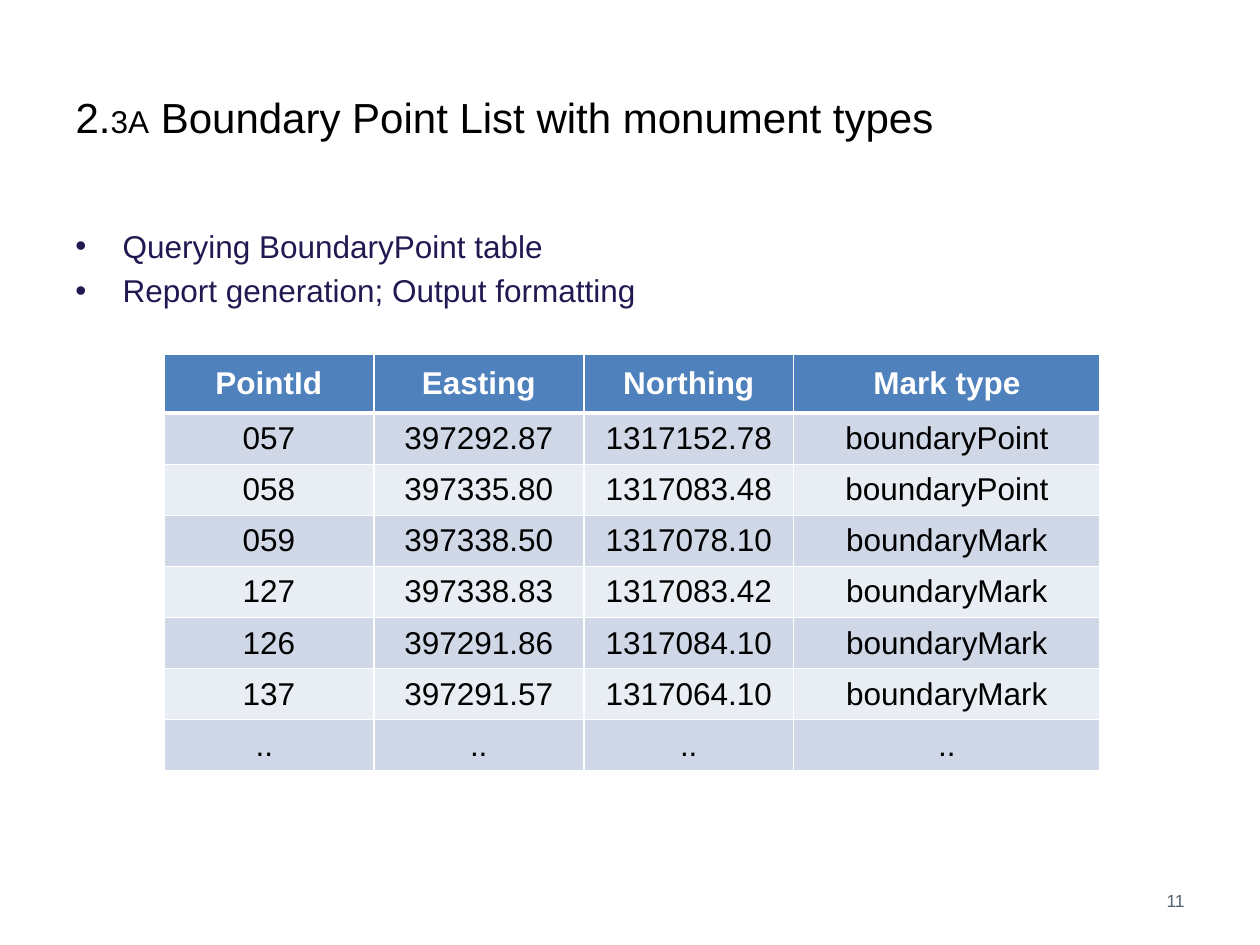
from lxml import etree
from pptx import Presentation
from pptx.dml.color import RGBColor
from pptx.enum import text
from pptx.oxml import ns
from pptx.util import Pt

FONT = "Arial"
BLACK = RGBColor(0x00, 0x00, 0x00)
WHITE = RGBColor(0xFF, 0xFF, 0xFF)
NAVY = RGBColor(0x21, 0x1A, 0x52)
SLATE = RGBColor(0x54, 0x61, 0x6E)
HEADER_BLUE = RGBColor(0x4F, 0x81, 0xBD)
BANDS = [RGBColor(0xD0, 0xD8, 0xE8), RGBColor(0xE9, 0xED, 0xF4)]

COLUMN_WIDTHS = [120, 120, 120, 175]
HEADER_HEIGHT, ROW_HEIGHT = 33.8, 29.2
POINTS = [
    ["PointId", "Easting", "Northing", "Mark type"],
    ["057", "397292.87", "1317152.78", "boundaryPoint"],
    ["058", "397335.80", "1317083.48", "boundaryPoint"],
    ["059", "397338.50", "1317078.10", "boundaryMark"],
    ["127", "397338.83", "1317083.42", "boundaryMark"],
    ["126", "397291.86", "1317084.10", "boundaryMark"],
    ["137", "397291.57", "1317064.10", "boundaryMark"],
    [".. ", "..", "..", ".."],
]


def write(para, wording, size=18, color=BLACK, bold=False, align=text.PP_ALIGN.LEFT):
    """Add one formatted span to a paragraph."""
    para.alignment = align
    span = para.add_run()
    span.text = wording
    span.font.name = FONT
    span.font.size = Pt(size)
    span.font.bold = bold
    span.font.color.rgb = color


def add_bullet(para, indent):
    properties = para._p.get_or_add_pPr()
    properties.set("marL", str(Pt(indent)))
    properties.set("indent", str(-Pt(indent)))
    etree.SubElement(properties, ns.qn("a:buFont"), typeface=FONT)
    etree.SubElement(properties, ns.qn("a:buChar"), char="•")


def set_borders(cell, bottom):
    """Draw white borders, 1 pt wide except for the bottom one."""
    properties = cell._tc.get_or_add_tcPr()
    widths = {"lnL": 1, "lnR": 1, "lnT": 1, "lnB": bottom}
    for place, (side, width) in enumerate(widths.items()):
        line = etree.Element(ns.qn(f"a:{side}"), w=str(Pt(width)))
        fill = etree.SubElement(line, ns.qn("a:solidFill"))
        etree.SubElement(fill, ns.qn("a:srgbClr"), val=str(WHITE))
        properties.insert(place, line)


def add_box(page, box, anchor):
    frame = page.shapes.add_textbox(*map(Pt, box)).text_frame
    frame.word_wrap = True
    frame.vertical_anchor = anchor
    return frame


def place_title(page, box):
    title = page.shapes.title
    title.left, title.top, title.width, title.height = map(Pt, box)
    frame = title.text_frame
    frame.auto_size = text.MSO_AUTO_SIZE.NONE
    frame.vertical_anchor = text.MSO_ANCHOR.MIDDLE
    para = frame.paragraphs[0]
    write(para, "2.", size=24)
    write(para, "3A", size=18)
    write(para, " Boundary Point List with monument types", size=24)


def place_bullets(page, box):
    frame = add_box(page, box, text.MSO_ANCHOR.TOP)
    lines = ["Querying BoundaryPoint table", "Report generation; Output formatting"]
    for number, wording in enumerate(lines):
        para = frame.add_paragraph() if number else frame.paragraphs[0]
        add_bullet(para, 27)
        if number:
            para.space_before = Pt(4)
        write(para, wording, color=NAVY)


def place_table(page, box):
    table = page.shapes.add_table(len(POINTS), len(COLUMN_WIDTHS), *map(Pt, box)).table
    for column, width in zip(table.columns, COLUMN_WIDTHS):
        column.width = Pt(width)
    for number, (row, values) in enumerate(zip(table.rows, POINTS)):
        header = number == 0
        row.height = Pt(HEADER_HEIGHT if header else ROW_HEIGHT)
        for cell, wording in zip(row.cells, values):
            cell.fill.solid()
            cell.fill.fore_color.rgb = HEADER_BLUE if header else BANDS[(number - 1) % 2]
            cell.vertical_anchor = text.MSO_ANCHOR.MIDDLE
            set_borders(cell, bottom=3 if header else 1)
            write(cell.text_frame.paragraphs[0], wording, bold=header,
                  color=WHITE if header else BLACK, align=text.PP_ALIGN.CENTER)


def place_page_number(page, box):
    frame = add_box(page, box, text.MSO_ANCHOR.MIDDLE)
    write(frame.paragraphs[0], "11", size=10, color=SLATE, align=text.PP_ALIGN.RIGHT)


def main():
    deck = Presentation()
    deck.slide_width, deck.slide_height = Pt(720), Pt(540)
    page = deck.slides.add_slide(deck.slide_layouts.get_by_name("Title Only"))

    # Boxes are left, top, width, height
    place_title(page, (36, 21.6, 648, 90))
    place_bullets(page, (36, 126, 648, 337))
    table_height = HEADER_HEIGHT + ROW_HEIGHT * (len(POINTS) - 1)
    place_table(page, (93.6, 202.3, sum(COLUMN_WIDTHS), table_height))
    place_page_number(page, (516, 500.4, 168, 28.8))

    deck.save("out.pptx")


if __name__ == "__main__":
    main()
